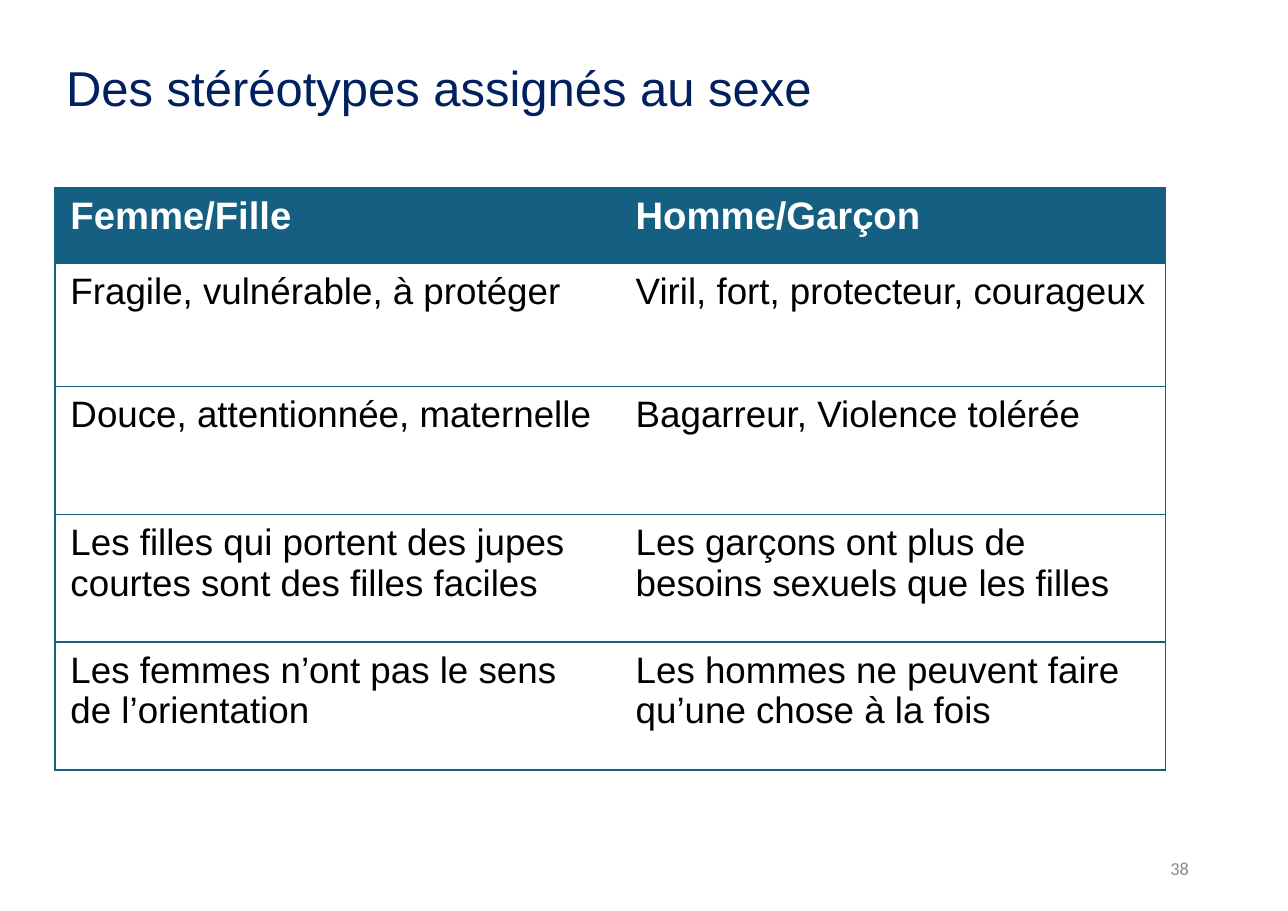
from dataclasses import dataclass

from lxml.etree import SubElement
from pptx import Presentation
from pptx.dml.color import RGBColor as Rgb
from pptx.enum.text import MSO_ANCHOR as Anchor, PP_ALIGN as Align
from pptx.oxml.ns import qn
from pptx.util import Inches, Pt


@dataclass(frozen=True)
class Theme:
    """Colours, fonts and type sizes of the deck."""
    title: str = "002060"
    accent: str = "156082"
    header: str = "FFFFFF"
    body: str = "000000"
    number: str = "8C8C8C"
    font: str = "Arial"
    number_font: str = "Calibri"
    title_size: int = 32
    header_size: int = 25
    body_size: int = 24
    number_size: int = 12


class Page:
    """A slide with the theme and a method for each kind of element."""

    def __init__(self, deck, theme):
        """Add a title-only slide to the deck."""
        self.theme = theme
        self.slide = deck.slides.add_slide(deck.slide_layouts[5])

    def style(self, para, size, color, font=None, bold=False):
        """Format every run of a paragraph."""
        for span in para.runs:
            span.font.name = font or self.theme.font
            span.font.size = Pt(size)
            span.font.bold = bold
            span.font.color.rgb = Rgb.from_string(color)

    def title(self, text, left, top, width, height):
        """Place and fill the title placeholder."""
        box = self.slide.shapes.title
        box.left, box.top = Inches(left), Inches(top)
        box.width, box.height = Inches(width), Inches(height)
        frame = box.text_frame
        frame.text = text
        frame.vertical_anchor = Anchor.MIDDLE
        para = frame.paragraphs[0]
        para.alignment = Align.LEFT
        para.line_spacing = 0.9
        self.style(para, self.theme.title_size, self.theme.title)

    def number(self, text, left, top, width, height):
        """Add the page number, aligned right."""
        box = self.slide.shapes.add_textbox(
            Inches(left), Inches(top), Inches(width), Inches(height))
        frame = box.text_frame
        frame.word_wrap = True
        frame.text = text
        frame.vertical_anchor = Anchor.MIDDLE
        para = frame.paragraphs[0]
        para.alignment = Align.RIGHT
        self.style(para, self.theme.number_size, self.theme.number,
                   self.theme.number_font)

    def borders(self, cell, visible):
        """Draw the visible sides of a cell and clear the others."""
        properties = cell._tc.get_or_add_tcPr()
        for side in "LRTB":
            line = SubElement(properties, qn(f"a:ln{side}"), w=str(Pt(1)))
            if side in visible:
                fill = SubElement(line, qn("a:solidFill"))
                SubElement(fill, qn("a:srgbClr"), val=self.theme.accent)
            else:
                SubElement(line, qn("a:noFill"))

    def cell(self, cell, text, is_header, visible):
        """Fill and format one table cell."""
        theme = self.theme
        self.borders(cell, visible)
        cell.margin_left = cell.margin_right = Inches(0.14)
        cell.margin_top = cell.margin_bottom = Inches(0.07)
        cell.text_frame.text = text
        para = cell.text_frame.paragraphs[0]
        if is_header:
            cell.fill.solid()
            cell.fill.fore_color.rgb = Rgb.from_string(theme.accent)
            self.style(para, theme.header_size, theme.header, bold=True)
        else:
            cell.fill.background()
            self.style(para, theme.body_size, theme.body)

    def table(self, rows, left, top, widths, heights):
        """Add a two-column table with a header row and an outer frame."""
        table = self.slide.shapes.add_table(
            len(rows), len(widths), Inches(left), Inches(top),
            Inches(sum(widths)), Inches(sum(heights))).table
        table.horz_banding = False
        for column, width in zip(table.columns, widths):
            column.width = Inches(width)
        for row_index, (texts, height) in enumerate(zip(rows, heights)):
            table.rows[row_index].height = Inches(height)
            for column_index, (text, visible) in enumerate(zip(texts, ("LTB", "RTB"))):
                self.cell(table.cell(row_index, column_index), text,
                          row_index == 0, visible)


STEREOTYPES = [
    ("Femme/Fille", "Homme/Garçon"),
    ("Fragile, vulnérable, à protéger", "Viril, fort, protecteur, courageux"),
    ("Douce, attentionnée, maternelle", "Bagarreur, Violence tolérée"),
    ("Les filles qui portent des jupes courtes sont des filles faciles",
     "Les garçons ont plus de besoins sexuels que les filles"),
    ("Les femmes n’ont pas le sens de l’orientation",
     "Les hommes ne peuvent faire qu’une chose à la fois"),
]


def main():
    """Build the slide and save the deck."""
    deck = Presentation()
    deck.slide_width, deck.slide_height = Inches(11.69), Inches(8.27)
    page = Page(deck, Theme())
    page.title("Des stéréotypes assignés au sexe", 0.5, 0.42, 10.09, 0.81)
    page.table(STEREOTYPES, 0.5, 1.7, [5.13, 4.95], [0.69, 1.12] + [1.16] * 3)
    page.number("38", 8.26, 7.66, 2.63, 0.44)
    deck.save("out.pptx")


if __name__ == "__main__":
    main()
